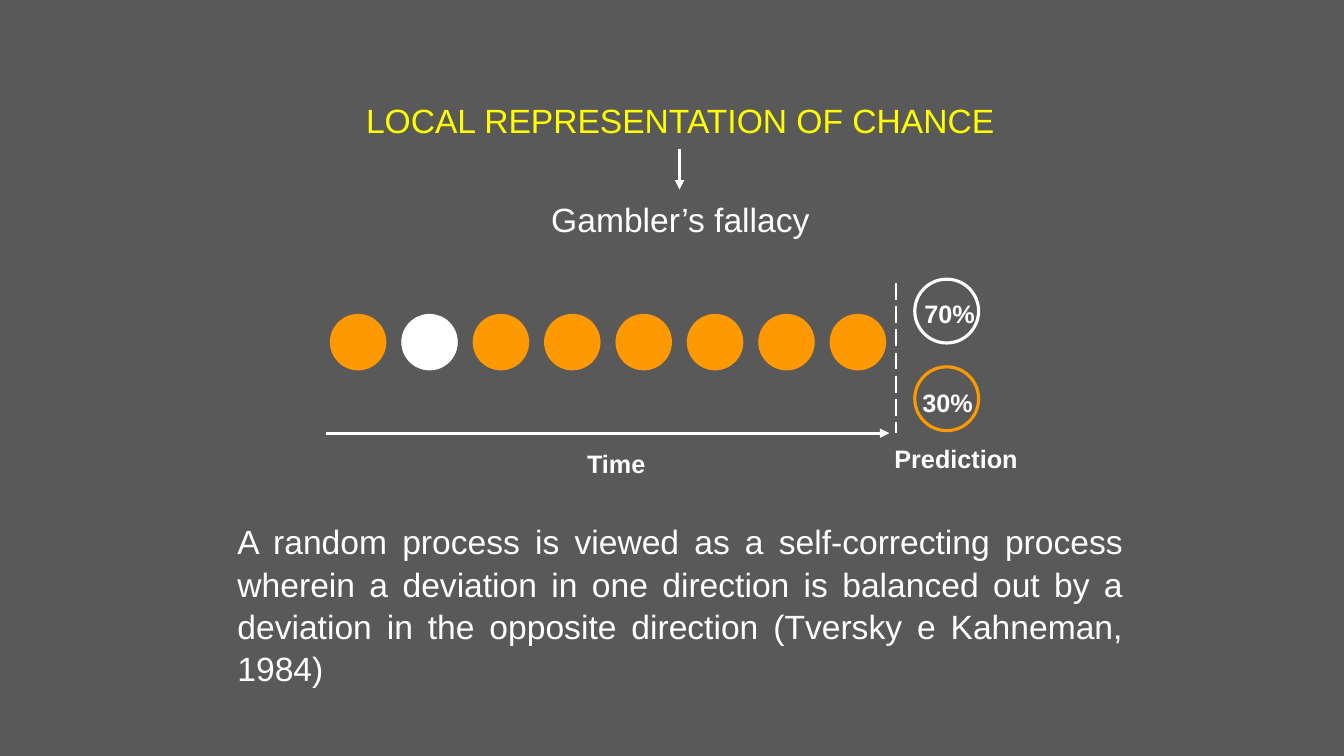
from lxml import etree
from pptx import Presentation
from pptx.dml.color import RGBColor
from pptx.enum.dml import MSO_LINE
from pptx.enum.shapes import MSO_CONNECTOR, MSO_SHAPE
from pptx.enum.text import MSO_ANCHOR, MSO_AUTO_SIZE, PP_ALIGN
from pptx.oxml.ns import qn
from pptx.util import Pt

ELLIPSE = MSO_SHAPE.OVAL
STRAIGHT = MSO_CONNECTOR.STRAIGHT
LONG_DASH = MSO_LINE.LONG_DASH
CENTER, JUSTIFY = PP_ALIGN.CENTER, PP_ALIGN.JUSTIFY
TOP = MSO_ANCHOR.TOP
NO_FIT = MSO_AUTO_SIZE.NONE
TITLE_ONLY = 5

GREY, WHITE, ORANGE, YELLOW = "595959", "FFFFFF", "FF9900", "FFFF00"


def rgb(color):
    return RGBColor.from_string(color)


class Diagram:
    """Holds the text style and the slide that elements are added to."""

    font = "Arial"
    line_spacing = 1.05

    def __init__(self, prs, background):
        self.slide = prs.slides.add_slide(prs.slide_layouts[TITLE_ONLY])
        fill = self.slide.background.fill
        fill.solid()
        fill.fore_color.rgb = rgb(background)

    def set_text(self, sp, text, size, color, bold, align):
        tf = sp.text_frame
        tf.word_wrap = True
        tf.auto_size = NO_FIT
        tf.vertical_anchor = TOP
        p = tf.paragraphs[0]
        p.text = text
        p.alignment = align
        p.line_spacing = self.line_spacing
        p.font.name = self.font
        p.font.size = Pt(size)
        p.font.bold = bold
        p.font.color.rgb = rgb(color)

    def title(self, text, x, y, w, h):
        sp = self.slide.shapes.title
        sp.left, sp.top, sp.width, sp.height = Pt(x), Pt(y), Pt(w), Pt(h)
        self.set_text(sp, text, 24, YELLOW, False, CENTER)

    def text(self, text, x, y, w, h, align=CENTER):
        sp = self.slide.shapes.add_textbox(Pt(x), Pt(y), Pt(w), Pt(h))
        self.set_text(sp, text, 24, WHITE, False, align)

    def label(self, text, x, y, w):
        sp = self.slide.shapes.add_textbox(Pt(x), Pt(y), Pt(w), Pt(28.8))
        self.set_text(sp, text, 18, WHITE, True, CENTER)

    def circle(self, x, y, size, color, line_width, filled):
        sp = self.slide.shapes.add_shape(ELLIPSE, Pt(x), Pt(y), Pt(size), Pt(size))
        sp.shadow.inherit = False
        if filled:
            sp.fill.solid()
            sp.fill.fore_color.rgb = rgb(color)
        else:
            sp.fill.background()
        sp.line.color.rgb = rgb(color)
        sp.line.width = Pt(line_width)

    def line(self, x1, y1, x2, y2, width, arrow=False, dash=None):
        sp = self.slide.shapes.add_connector(STRAIGHT, Pt(x1), Pt(y1), Pt(x2), Pt(y2))
        sp.line.color.rgb = rgb(WHITE)
        sp.line.width = Pt(width)
        if dash:
            sp.line.dash_style = dash
        spPr = sp._element.spPr
        if arrow:
            etree.SubElement(spPr.find(qn("a:ln")), qn("a:tailEnd"), type="triangle")
        etree.SubElement(spPr, qn("a:effectLst"))


def main():
    prs = Presentation()
    prs.slide_width, prs.slide_height = Pt(960), Pt(540)
    d = Diagram(prs, GREY)

    d.title("LOCAL REPRESENTATION OF CHANCE", 213.8, 66.5, 544.3, 36)
    d.line(485.4, 106.6, 485.4, 135.4, 2.25, arrow=True)
    d.text("Gambler’s fallacy", 301.7, 137, 368.6, 36)

    outcomes = [ORANGE, WHITE] + [ORANGE] * 6
    for i, color in enumerate(outcomes):
        d.circle(236 + 51 * i, 224.6, 39.6, color, 0.75, filled=True)
    d.line(232.6, 309.4, 635.2, 309.4, 2.25, arrow=True)
    d.label("Time", 372.2, 315.6, 136)

    d.line(640, 202.3, 640, 309.4, 1.5, dash=LONG_DASH)
    predictions = [("70%", WHITE, 199.4, 644.4, 208.4),
                   ("30%", ORANGE, 262, 643, 272.2)]
    for share, color, ring_y, label_x, label_y in predictions:
        d.circle(653.4, ring_y, 45.6, color, 2.25, filled=False)
        d.label(share, label_x, label_y, 67.7)
    d.label("Prediction", 614.9, 312, 136)

    d.text("A random process is viewed as a self-correcting process wherein "
           "a deviation in one direction is balanced out by a deviation in the "
           "opposite direction (Tversky e Kahneman, 1984)",
           162.5, 367.3, 646.6, 123.8, JUSTIFY)

    prs.save("out.pptx")


if __name__ == "__main__":
    main()
